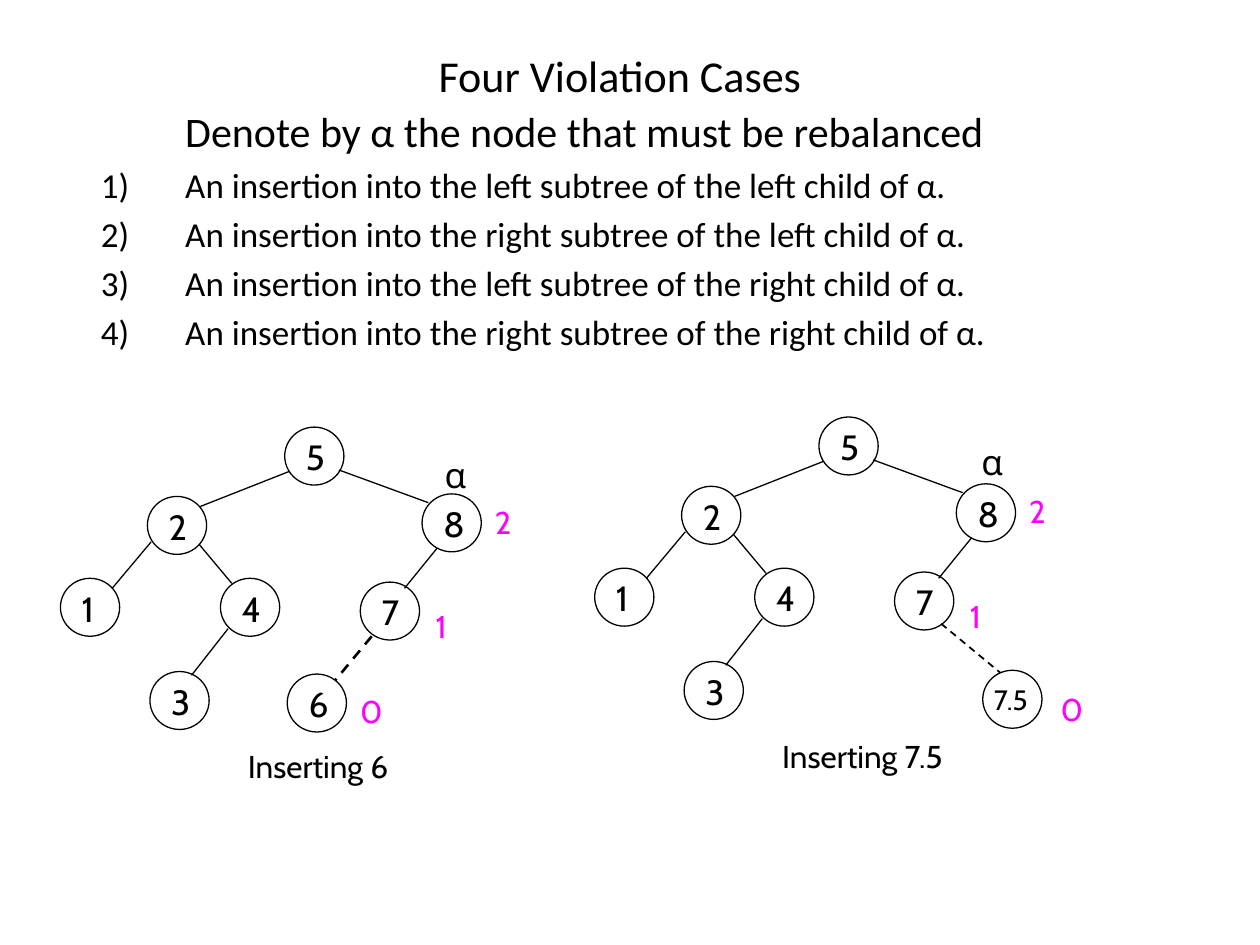
from dataclasses import dataclass
from typing import Any

from lxml import etree
from pptx import Presentation
from pptx.dml.color import RGBColor
from pptx.enum.dml import MSO_LINE
from pptx.enum.shapes import MSO_CONNECTOR, MSO_SHAPE
from pptx.enum.text import MSO_ANCHOR, MSO_AUTO_SIZE, PP_ALIGN
from pptx.oxml.ns import qn
from pptx.util import Inches, Pt

STRAIGHT = MSO_CONNECTOR.STRAIGHT
ELLIPSE = MSO_SHAPE.OVAL
DASH = MSO_LINE.DASH
MIDDLE = MSO_ANCHOR.MIDDLE
FIT_SHAPE, FIT_NONE = MSO_AUTO_SIZE.SHAPE_TO_FIT_TEXT, MSO_AUTO_SIZE.NONE
CENTER, LEFT = PP_ALIGN.CENTER, PP_ALIGN.LEFT


@dataclass(frozen=True)
class Theme:
    ink: RGBColor = RGBColor(0x00, 0x00, 0x00)
    height_mark: RGBColor = RGBColor(0xFF, 0x00, 0xFF)
    text_font: str = "Calibri"
    tree_font: str = "Cabin"
    title_size: float = 25.2
    lead_size: float = 24
    node_size: float = 20
    label_size: float = 18
    small_node_size: float = 16
    line_width: float = 0.75


THEME = Theme()
NODE_WIDTH, NODE_HEIGHT = 0.47, 0.46


@dataclass(frozen=True)
class Node:
    key: str
    left: float
    top: float


@dataclass(frozen=True)
class Edge:
    x1: float
    y1: float
    x2: float
    y2: float
    width: float = THEME.line_width
    dashed: bool = False


@dataclass(frozen=True)
class Label:
    text: str
    left: float
    top: float
    width: float = 0.35
    height: float = 0.43
    size: float = THEME.node_size
    color: RGBColor = THEME.ink


@dataclass(frozen=True)
class Tree:
    dx: float
    dy: float
    inserted: Node
    inserted_edge: Edge
    labels: tuple[Label, ...]
    alpha: Label


def height_label(text: str, left: float, top: float) -> Label:
    return Label(text, left, top, 0.34, 0.4, THEME.label_size, THEME.height_mark)


SHARED_NODES = (
    Node("5", 2.26, 3.39),
    Node("2", 1.17, 3.94),
    Node("1", 0.48, 4.59),
    Node("4", 1.75, 4.59),
    Node("3", 1.19, 5.33),
    Node("8", 3.35, 3.92),
    Node("7", 2.86, 4.62),
)
SHARED_EDGES = (
    Edge(1.2, 4.3, 0.89, 4.67),
    Edge(1.58, 4.32, 1.84, 4.63),
    Edge(1.81, 4.99, 1.52, 5.36),
    Edge(3.47, 4.35, 3.21, 4.67),
    Edge(2.3, 3.74, 1.59, 4.02),
    Edge(2.69, 3.73, 3.4, 3.99),
)
SHARED_LABELS = (height_label("1", 3.36, 4.77), height_label("2", 3.83, 3.94))
TREES = (
    Tree(
        0, 0, Node("6", 2.28, 5.35), Edge(2.95, 5.05, 2.66, 5.4, 1.5, True),
        (
            Label("6", 2.35, 5.37),
            Label("Inserting 6", 1.87, 5.88, 1.4, 0.4, THEME.label_size),
            height_label("0", 2.76, 5.44),
        ),
        Label("α", 3.43, 3.55, 0.38),
    ),
    Tree(
        4.24, -0.08, Node("7.5", 7.8, 5.32), Edge(7.47, 4.95, 7.94, 5.34, 1, True),
        (
            Label("7.5", 7.79, 5.37, 0.51, 0.37, THEME.small_node_size),
            Label("Inserting 7.5", 6.11, 5.8, 1.61, 0.4, THEME.label_size),
            height_label("0", 8.32, 5.43),
        ),
        Label("α", 7.69, 3.45, 0.38),
    ),
)
CASES = (
    ("left", "left"),
    ("right", "left"),
    ("left", "right"),
    ("right", "right"),
)


def apply_format(target: Any, values: dict[str, Any]) -> None:
    for name, value in values.items():
        setattr(target, name, value)


def place(shape: Any, left: float, top: float, width: float, height: float) -> None:
    lengths = {"left": left, "top": top, "width": width, "height": height}
    apply_format(shape, {name: Inches(value) for name, value in lengths.items()})


def write(para: Any, text: str, font: str, size: float, color: RGBColor) -> None:
    span = para.add_run()
    span.text = text
    apply_format(span.font, {"name": font, "size": Pt(size)})
    span.font.color.rgb = color


def draw_node(shapes: Any, node: Node, dx: float = 0, dy: float = 0) -> None:
    circle = shapes.add_shape(
        ELLIPSE, Inches(node.left + dx), Inches(node.top + dy),
        Inches(NODE_WIDTH), Inches(NODE_HEIGHT),
    )
    circle.shadow.inherit = False
    circle.fill.background()
    circle.line.color.rgb = THEME.ink
    circle.line.width = Pt(THEME.line_width)


def draw_edge(shapes: Any, edge: Edge, dx: float = 0, dy: float = 0) -> None:
    connector = shapes.add_connector(
        STRAIGHT, Inches(edge.x1 + dx), Inches(edge.y1 + dy),
        Inches(edge.x2 + dx), Inches(edge.y2 + dy),
    )
    connector.line.color.rgb = THEME.ink
    connector.line.width = Pt(edge.width)
    if edge.dashed:
        connector.line.dash_style = DASH
    etree.SubElement(connector._element.spPr, qn("a:effectLst"))


def draw_label(shapes: Any, label: Label, dx: float = 0, dy: float = 0) -> None:
    box = shapes.add_textbox(
        Inches(label.left + dx), Inches(label.top + dy),
        Inches(label.width), Inches(label.height),
    )
    apply_format(box.text_frame, {"word_wrap": False, "auto_size": FIT_SHAPE})
    write(box.text_frame.paragraphs[0], label.text, THEME.tree_font, label.size, label.color)


def draw_tree(shapes: Any, tree: Tree) -> None:
    members = shapes.add_group_shape().shapes
    for node in SHARED_NODES:
        draw_node(members, node, tree.dx, tree.dy)
        draw_label(members, Label(node.key, node.left + 0.07, node.top + 0.02), tree.dx, tree.dy)
    for edge in SHARED_EDGES:
        draw_edge(members, edge, tree.dx, tree.dy)
    for label in SHARED_LABELS:
        draw_label(members, label, tree.dx, tree.dy)
    draw_node(members, tree.inserted)
    draw_edge(members, tree.inserted_edge)
    for label in tree.labels:
        draw_label(members, label)


def fill_body(body: Any) -> None:
    place(body, 0.7, 0.79, 8.94, 6.45)
    frame = body.text_frame
    frame.auto_size = FIT_NONE
    lines = [("\tDenote by α the node that must be rebalanced", THEME.lead_size, "a:buNone", {})]
    for subtree, child in CASES:
        text = f"An insertion into the {subtree} subtree of the {child} child of α."
        lines.append((text, THEME.node_size, "a:buAutoNum", {"type": "arabicParenR"}))
    for index, (text, size, bullet, attributes) in enumerate(lines):
        para = frame.add_paragraph() if index else frame.paragraphs[0]
        para.alignment = LEFT
        properties = para._p.get_or_add_pPr()
        properties.set("marL", str(Inches(0.67)))
        properties.set("indent", str(-Inches(0.67)))
        etree.SubElement(properties, qn(bullet), attributes)
        write(para, text, THEME.text_font, size, THEME.ink)


def main() -> None:
    deck = Presentation()
    apply_format(deck, {"slide_width": Inches(10), "slide_height": Inches(7.5)})
    page = deck.slides.add_slide(deck.slide_layouts[1])
    title = page.shapes.title
    place(title, 0.67, 0.33, 8.5, 0.53)
    apply_format(title.text_frame, {"vertical_anchor": MIDDLE, "auto_size": FIT_NONE})
    heading = title.text_frame.paragraphs[0]
    heading.alignment = CENTER
    write(heading, "Four Violation Cases", THEME.text_font, THEME.title_size, THEME.ink)
    fill_body(page.placeholders[1])
    for tree in TREES:
        draw_tree(page.shapes, tree)
    for tree in TREES:
        draw_label(page.shapes, tree.alpha)
    deck.save("out.pptx")


if __name__ == "__main__":
    main()
